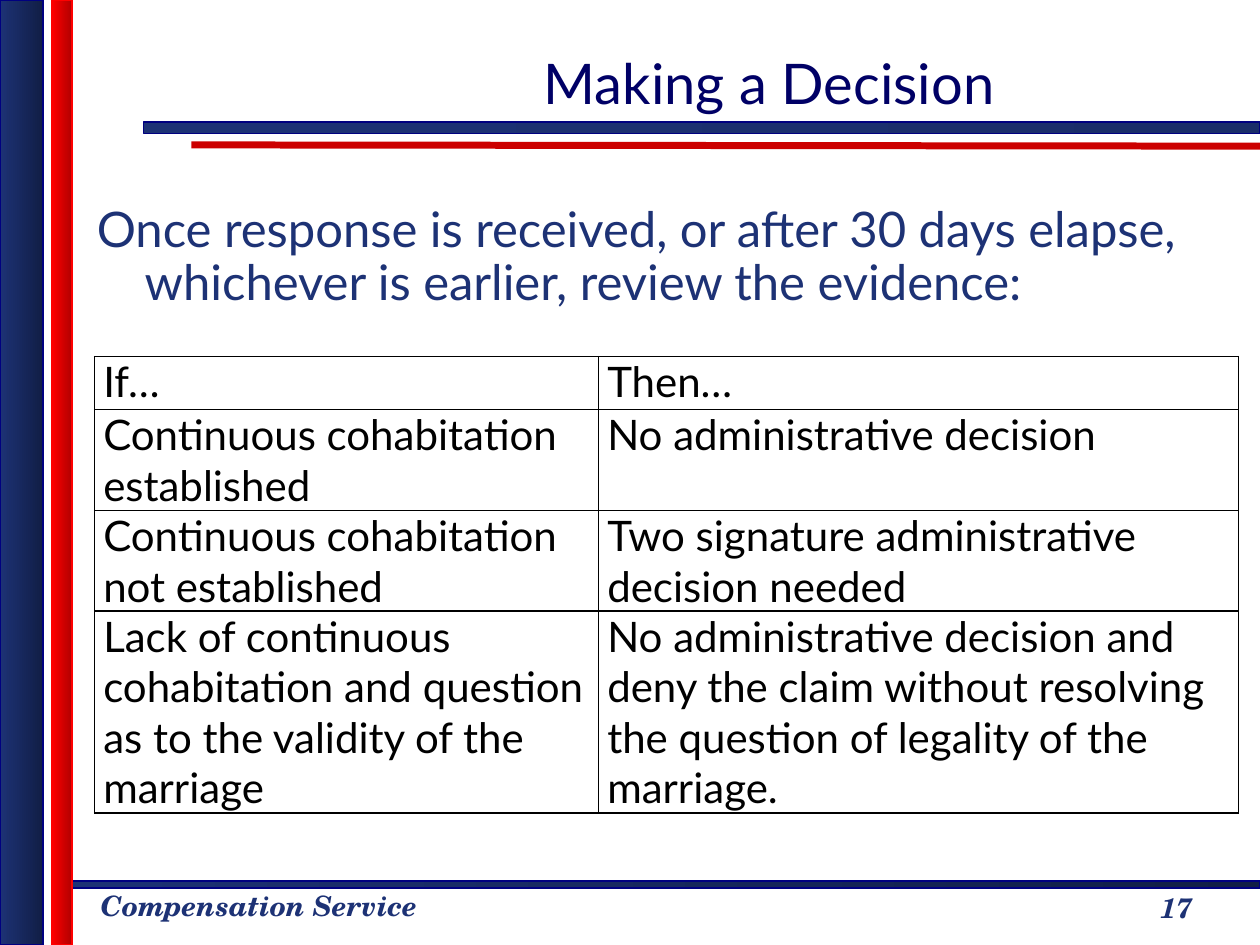
import pptx
import pptx.dml.color
import pptx.enum.shapes
import pptx.enum.text
import pptx.oxml
import pptx.oxml.ns
import pptx.util
from pptx.util import Inches

COLORS = {
    "navy": "1D3275", "dark_navy": "111E46", "rule_navy": "1A2D69", "edge": "000080",
    "red": "FF0000", "dark_red": "B20000", "rule_red": "CC0000",
    "title": "000066", "black": "000000",
}
ALIGN = pptx.enum.text.PP_ALIGN
ANCHOR = pptx.enum.text.MSO_ANCHOR


def rgb(name):
    return pptx.dml.color.RGBColor.from_string(COLORS[name])


def write_text(frame, text, color, paragraph_format, font_format):
    """Fill the first paragraph of a frame and format it."""
    frame.word_wrap = True
    paragraph = frame.paragraphs[0]
    for name, value in paragraph_format.items():
        setattr(paragraph, name, value)
    run = paragraph.add_run()
    run.text = text
    for name, value in font_format.items():
        setattr(run.font, name, value)
    run.font.color.rgb = rgb(color)
    return paragraph


presentation = pptx.Presentation()
presentation.slide_width = Inches(10)
presentation.slide_height = Inches(7.5)
slide = presentation.slides.add_slide(presentation.slide_layouts[6])

# Red rule under the title
rule = slide.shapes.add_connector(
    pptx.enum.shapes.MSO_CONNECTOR.STRAIGHT,
    Inches(1.52), Inches(1.15), Inches(10), Inches(1.16))
rule.line.color.rgb = rgb("rule_red")
rule.line.width = pptx.util.Pt(4)
rule._element.spPr.append(pptx.oxml.parse_xml(
    f"<a:effectLst {pptx.oxml.ns.nsdecls('a')}/>"))

# Gradient bars: footer, title, left navy, left red
bars = [
    ((0.46, 6.99, 9.54, 0.06), "navy", "dark_navy", "edge"),
    ((1.14, 0.97, 8.86, 0.09), "navy", "rule_navy", "edge"),
    ((0, 0, 0.34, 7.5), "navy", "dark_navy", "edge"),
    ((0.41, 0, 0.16, 7.5), "red", "dark_red", "red"),
]
for box, start, end, edge in bars:
    bar = slide.shapes.add_shape(
        pptx.enum.shapes.MSO_SHAPE.RECTANGLE, *map(Inches, box))
    bar.shadow.inherit = False
    bar.fill.gradient()
    bar.fill.gradient_angle = 0
    for stop, color in zip(bar.fill.gradient_stops, (start, end)):
        stop.color.rgb = rgb(color)
    bar.line.color.rgb = rgb(edge)
    bar.line.width = pptx.util.Pt(1)

# Title, body, footer and page number
footer_font = {"name": "TeX Gyre Schola", "size": pptx.util.Pt(16),
               "bold": True, "italic": True}
title_font = {"name": "Lato", "size": pptx.util.Pt(32)}
body_font = {"name": "Lato", "size": pptx.util.Pt(28)}
table_font = {"name": "Lato", "size": pptx.util.Pt(24)}
centered = {"alignment": ALIGN.CENTER}
texts = [
    ((0.7, 7, 2.75, 0.37), ANCHOR.TOP, "Compensation Service", "navy", {}, footer_font),
    ((2.21, 0, 7.79, 0.97), ANCHOR.BOTTOM, "Making a Decision", "title",
     centered, title_font),
    ((0.67, 1.58, 9.1, 5.03), ANCHOR.TOP,
     "Once response is received, or after 30 days elapse, "
     "whichever is earlier, review the evidence:",
     "navy", {"line_spacing": 0.9}, body_font),
    ((8.67, 6.95, 1.33, 0.5), ANCHOR.MIDDLE, "17", "navy", centered, footer_font),
]
for box, anchor, text, color, paragraph_format, font_format in texts:
    frame = slide.shapes.add_textbox(*map(Inches, box)).text_frame
    frame.vertical_anchor = anchor
    paragraph = write_text(frame, text, color, paragraph_format, font_format)
    if font_format is body_font:
        properties = paragraph._p.get_or_add_pPr()
        properties.set("marL", str(Inches(0.38)))
        properties.set("indent", str(Inches(-0.38)))

# Decision table
rows = [
    ("If…", "Then…"),
    ("Continuous cohabitation established", "No administrative decision"),
    ("Continuous cohabitation not established",
     "Two signature administrative decision needed"),
    ("Lack of continuous cohabitation and question as to the validity of the marriage",
     "No administrative decision and deny the claim without resolving "
     "the question of legality of the marriage."),
]
row_heights = [0.42, 0.8, 0.8, 1.6]
column_widths = [4, 5.08]
table = slide.shapes.add_table(
    len(rows), len(column_widths), Inches(0.75), Inches(2.83),
    Inches(sum(column_widths)), Inches(sum(row_heights))).table
table.first_row = False
table.horz_banding = False
for column, width in zip(table.columns, column_widths):
    column.width = Inches(width)
cell_format = {"margin_left": Inches(0.07), "margin_right": Inches(0.07),
               "margin_top": 0, "margin_bottom": 0}
for row, height, row_texts in zip(table.rows, row_heights, rows):
    row.height = Inches(height)
    for cell, text in zip(row.cells, row_texts):
        for name, value in cell_format.items():
            setattr(cell, name, value)
        write_text(cell.text_frame, text, "black", {}, table_font)
        properties = cell._tc.get_or_add_tcPr()
        for side in ("lnL", "lnR", "lnT", "lnB"):
            properties.append(pptx.oxml.parse_xml(
                f'<a:{side} {pptx.oxml.ns.nsdecls("a")} w="{pptx.util.Pt(1)}">'
                f'<a:solidFill><a:srgbClr val="{COLORS["black"]}"/></a:solidFill>'
                f'</a:{side}>'))
        cell.fill.background()

presentation.save("out.pptx")
